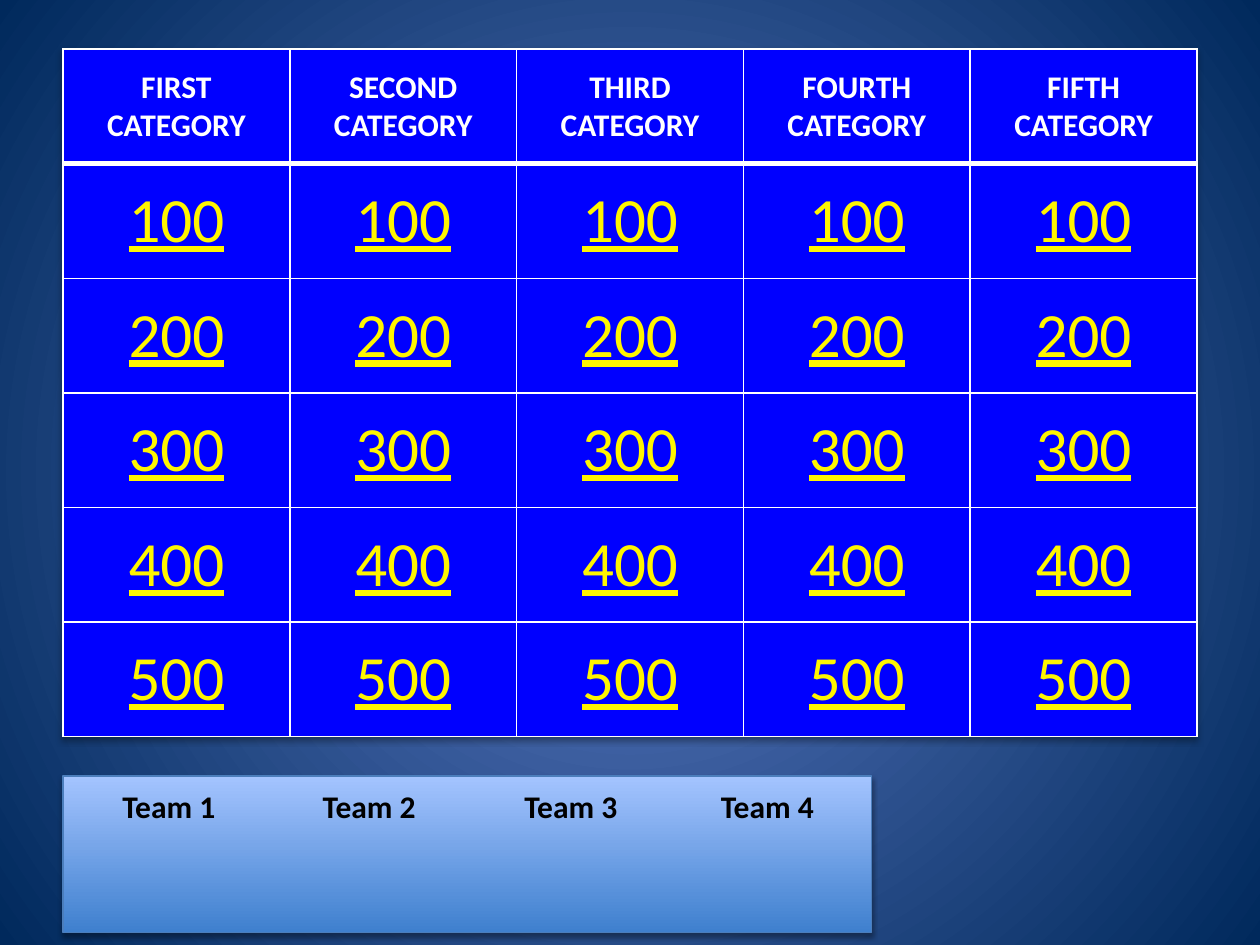
import pptx
import pptx.dml.color
import pptx.enum.shapes
import pptx.enum.text
import pptx.oxml
import pptx.oxml.ns
import pptx.util

Pt = pptx.util.Pt
CENTER = pptx.enum.text.PP_ALIGN.CENTER

CATEGORIES = ["FIRST CATEGORY", "SECOND CATEGORY", "THIRD CATEGORY",
              "FOURTH CATEGORY", "FIFTH CATEGORY"]
VALUES = ["100", "200", "300", "400", "500"]
TEAMS = [("Team 1", 46.8), ("Team 2", 161.3), ("Team 3", 276.5), ("Team 4", 388.8)]

LEFT, BOARD_TOP = 36, 28.1
COLUMN_WIDTH, ROW_HEIGHT = 129.6, 65.5
SCORE_TOP, SCORE_WIDTH, SCORE_HEIGHT = 443.5, 462.2, 89.3
TEAM_TOP, TEAM_WIDTH, TEAM_HEIGHT = 446.4, 99.4, 28.8


def color(value):
    return pptx.dml.color.RGBColor.from_string(value)


def xml(tag, attributes="", content=""):
    """Return a new element of the drawing namespace."""
    namespace = pptx.oxml.ns.nsdecls("a")
    return pptx.oxml.parse_xml(f"<a:{tag} {namespace} {attributes}>{content}</a:{tag}>")


def soft_shadow():
    return xml("outerShdw", 'blurRad="39370" dist="22860" dir="5400000" rotWithShape="0"',
               '<a:srgbClr val="000000"><a:alpha val="35000"/></a:srgbClr>')


def set_gradient(fill, start, end):
    fill.gradient()
    for stop, value, position in zip(fill.gradient_stops, (start, end), (0, 1)):
        stop.color.rgb = color(value)
        stop.position = position


def write(frame, text, size, value, bold=False, underline=None):
    para = frame.paragraphs[0]
    para.alignment = CENTER
    span = para.add_run()
    span.text = text
    span.font.name = "Calibri"
    span.font.size = Pt(size)
    span.font.bold = bold
    span.font.underline = underline
    span.font.color.rgb = color(value)


def set_borders(cell, top, bottom):
    properties = cell._tc.get_or_add_tcPr()
    for side, width in (("L", 1), ("R", 1), ("T", top), ("B", bottom)):
        properties.append(xml(f"ln{side}", f'w="{Pt(width)}"',
                              '<a:solidFill><a:srgbClr val="FFFFFF"/></a:solidFill>'))


def paint_background(slide):
    set_gradient(slide.background.fill, "5E7CC5", "00295C")
    gradient = slide.element.xpath(".//p:bgPr/a:gradFill")[0]
    for line in gradient.xpath("a:lin"):
        gradient.remove(line)
    gradient.append(xml("path", 'path="circle"',
                        '<a:fillToRect l="50000" t="50000" r="50000" b="50000"/>'))


def add_board(slide):
    rows = [CATEGORIES] + [[value] * len(CATEGORIES) for value in VALUES]
    frame = slide.shapes.add_table(
        len(rows), len(CATEGORIES), Pt(LEFT), Pt(BOARD_TOP),
        Pt(COLUMN_WIDTH * len(CATEGORIES)), Pt(ROW_HEIGHT * len(rows)))
    board = frame.table
    effects = xml("effectLst")
    effects.append(soft_shadow())
    board._tbl.tblPr.insert(0, effects)
    for column in board.columns:
        column.width = Pt(COLUMN_WIDTH)
    for index, texts in enumerate(rows):
        board.rows[index].height = Pt(ROW_HEIGHT)
        for cell, text in zip(board.rows[index].cells, texts):
            set_borders(cell, 3 if index == 1 else 1, 3 if index == 0 else 1)
            cell.fill.solid()
            cell.fill.fore_color.rgb = color("0000FF")
            cell.vertical_anchor = pptx.enum.text.MSO_ANCHOR.MIDDLE
            if index == 0:
                write(cell.text_frame, text, 18, "FFFFFF", bold=True)
            else:
                write(cell.text_frame, text, 36, "FFF500", underline=True)


def add_scoreboard(slide):
    panel = slide.shapes.add_shape(
        pptx.enum.shapes.MSO_SHAPE.RECTANGLE, Pt(LEFT), Pt(SCORE_TOP),
        Pt(SCORE_WIDTH), Pt(SCORE_HEIGHT))
    set_gradient(panel.fill, "3F80CE", "A4C4FF")
    panel.fill.gradient_angle = 90
    panel.line.color.rgb = color("4B7EBC")
    panel.line.width = Pt(0.75)
    panel.shadow.inherit = False
    panel.element.xpath("p:spPr/a:effectLst")[0].append(soft_shadow())
    for team, left in TEAMS:
        box = slide.shapes.add_textbox(Pt(left), Pt(TEAM_TOP), Pt(TEAM_WIDTH), Pt(TEAM_HEIGHT))
        box.text_frame.word_wrap = True
        box.text_frame.auto_size = pptx.enum.text.MSO_AUTO_SIZE.SHAPE_TO_FIT_TEXT
        write(box.text_frame, team, 18, "000000", bold=True)


def main():
    deck = pptx.Presentation()
    deck.slide_width, deck.slide_height = Pt(720), Pt(540)
    slide = deck.slides.add_slide(deck.slide_layouts[6])
    paint_background(slide)
    add_board(slide)
    add_scoreboard(slide)
    deck.save("out.pptx")


if __name__ == "__main__":
    main()
